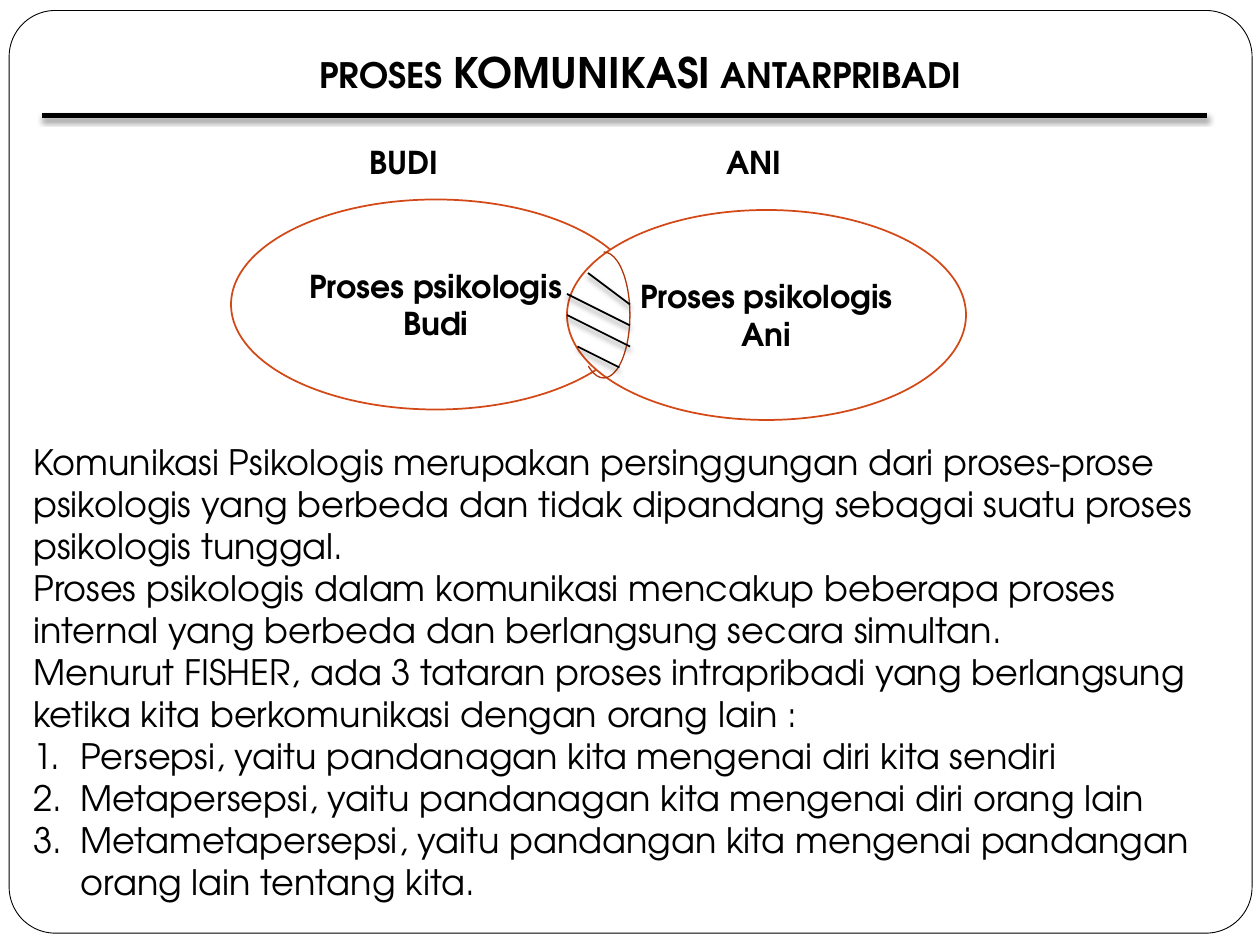
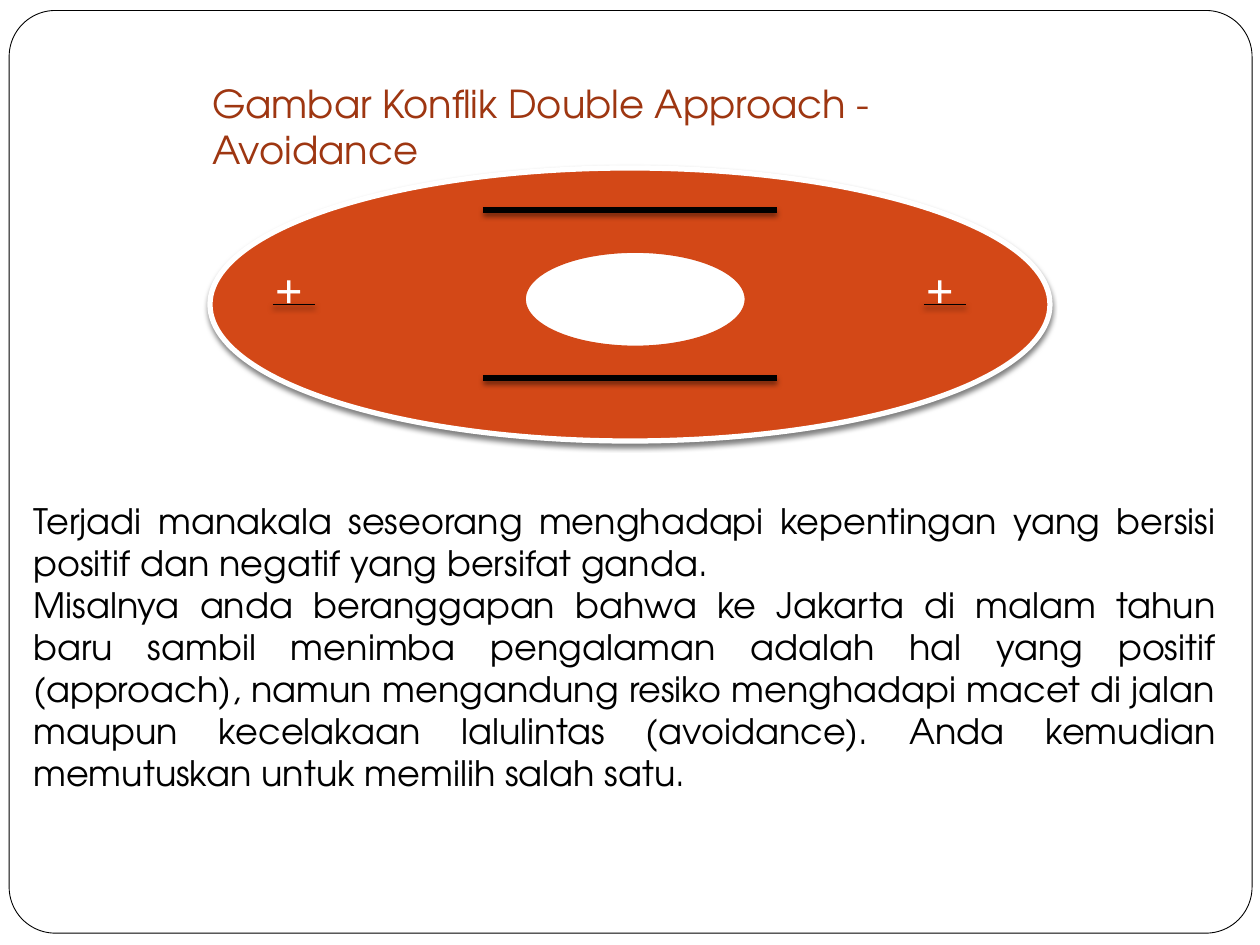
from dataclasses import dataclass

from lxml import etree
from pptx import Presentation
from pptx.dml.color import RGBColor
from pptx.enum.shapes import MSO_CONNECTOR, MSO_SHAPE
from pptx.enum.text import MSO_ANCHOR, MSO_AUTO_SIZE, PP_ALIGN
from pptx.oxml.ns import qn
from pptx.util import Pt

PX = 9525  # 96 px to the inch
STRAIGHT = MSO_CONNECTOR.STRAIGHT
OVAL, ARC, ROUNDED = MSO_SHAPE.OVAL, MSO_SHAPE.ARC, MSO_SHAPE.ROUNDED_RECTANGLE
TOP, MIDDLE, BOTTOM = MSO_ANCHOR.TOP, MSO_ANCHOR.MIDDLE, MSO_ANCHOR.BOTTOM
LEFT, CENTER, JUSTIFY = PP_ALIGN.LEFT, PP_ALIGN.CENTER, PP_ALIGN.JUSTIFY


@dataclass(frozen=True)
class Theme:
    black: str = "000000"
    white: str = "FFFFFF"
    orange: str = "D34817"
    brown: str = "B1360B"
    rust: str = "9E3611"
    font: str = "TeX Gyre Adventor"
    sign_font: str = "Times New Roman"
    label: int = 18
    body: int = 20
    heading: int = 22
    emphasis: int = 24
    sign: int = 28


theme = Theme()


def write(shape, paragraphs, *, size, color=theme.black, font=theme.font, bold=False,
          align=LEFT, anchor=TOP, wrap=True, numbered_from=None):
    """Fill a shape; a paragraph is a string or a list of (text, size) spans."""
    frame = shape.text_frame
    frame.auto_size = MSO_AUTO_SIZE.NONE
    frame.word_wrap, frame.vertical_anchor = wrap, anchor
    for index, content in enumerate(paragraphs):
        para = frame.add_paragraph() if index else frame.paragraphs[0]
        para.alignment = align
        if numbered_from is not None and index >= numbered_from:
            properties = para._p.get_or_add_pPr()
            properties.set("marL", str(36 * PX))
            properties.set("indent", str(-36 * PX))
            etree.SubElement(properties, qn("a:buFont"), typeface=font)
            etree.SubElement(properties, qn("a:buAutoNum"), type="arabicPeriod")
        spans = [(content, size)] if isinstance(content, str) else content
        for text, span_size in spans:
            span = para.add_run()
            span.text = text
            span.font.name, span.font.size, span.font.bold = font, Pt(span_size), bold
            span.font.color.rgb = RGBColor.from_string(color)


def paint(item, line, width, fill=None, shadow=False):
    """Set line, fill and shadow of a shape or connector."""
    if fill:
        item.fill.solid()
        item.fill.fore_color.rgb = RGBColor.from_string(fill)
    item.line.color.rgb = RGBColor.from_string(line)
    item.line.width = Pt(width)
    effects = etree.SubElement(item.element.spPr, qn("a:effectLst"))
    if shadow:
        outer = etree.SubElement(effects, qn("a:outerShdw"), blurRad=str(Pt(3)),
                                 dist=str(Pt(2)), dir="5400000", rotWithShape="0")
        color = etree.SubElement(outer, qn("a:srgbClr"), val=theme.black)
        etree.SubElement(color, qn("a:alpha"), val="50000")


deck = Presentation()
deck.slide_width, deck.slide_height = 960 * PX, 720 * PX
layout = deck.slide_layouts[5]
process, conflict = [deck.slides.add_slide(layout) for _ in range(2)]

# The rounded page frame lives on the shared layout, behind everything.
page_frame = process.shapes.add_shape(ROUNDED, 7 * PX, 8 * PX, 947 * PX, 703 * PX)
page_frame.adjustments[0] = 0.05
paint(page_frame, theme.black, 0.5, fill=theme.white)
page_frame.element.nvSpPr.cNvPr.set("id", "99")
layout.shapes.element.insert(2, page_frame.element)

# Titles
titles = [
    (process, (80, 0, 816, 84),
     [("PROSES ", theme.body), ("KOMUNIKASI", theme.emphasis), (" ANTARPRIBADI", theme.body)],
     dict(size=theme.body, bold=True, align=CENTER, anchor=BOTTOM)),
    (conflict, (152, 56, 676, 45), "Gambar Konflik Double Approach - Avoidance",
     dict(size=theme.heading, color=theme.rust)),
]
for page, place, text, style in titles:
    title = page.shapes.title
    title.left, title.top, title.width, title.height = [n * PX for n in place]
    write(title, [text], **style)
process.shapes.title.text_frame.margin_bottom = 10 * PX

# Overlapping psychological processes and the large conflict oval
ovals = [
    (process, (176, 152, 312, 160), theme.white, theme.orange, 1, "Proses psikologis Budi"),
    (process, (432, 160, 304, 160), theme.white, theme.orange, 1, "Proses psikologis Ani"),
    (conflict, (160, 128, 640, 208), theme.orange, theme.white, 3, None),
    (conflict, (400, 192, 168, 72), theme.white, theme.orange, 1, None),
]
for page, place, fill, line, width, text in ovals:
    oval = page.shapes.add_shape(OVAL, *[n * PX for n in place])
    paint(oval, line, width, fill=fill, shadow=line == theme.white)
    if text:
        write(oval, [text], size=theme.label, bold=True, align=CENTER, anchor=MIDDLE)

overlap_edge = process.shapes.add_shape(ARC, 440 * PX, 192 * PX, 40 * PX, 96 * PX)
overlap_edge.adjustments[0], overlap_edge.adjustments[1] = 162, 64.01
overlap_edge.fill.background()
paint(overlap_edge, theme.brown, 0.75)

# Title rule, overlap hatching, barriers and sign underlines
lines = [
    (process, 3, [(32, 88, 920, 88)]),
    (process, 1, [(448, 208, 480, 232), (432, 224, 480, 248),
                  (432, 240, 480, 264), (440, 264, 472, 280)]),
    (conflict, 3, [(368, y, 592, y) for y in (160, 288)]),
    (conflict, 1, [(x, 232, x + 32, 232) for x in (208, 704)]),
]
for page, width, ends in lines:
    for points in ends:
        connector = page.shapes.add_connector(STRAIGHT, *[n * PX for n in points])
        paint(connector, theme.black, width, shadow=True)

# Labels, signs and body text
label_style = dict(size=theme.label, bold=True, wrap=False)
sign_style = dict(size=theme.sign, color=theme.white, font=theme.sign_font, bold=True, wrap=False)
boxes = [
    (process, (272, 104, 80, 38), ["BUDI"], label_style),
    (process, (544, 104, 62, 38), ["ANI"], label_style),
    (process, (16, 331, 928, 365), [
        "Komunikasi Psikologis merupakan persinggungan dari proses-prose psikologis "
        "yang berbeda dan tidak dipandang sebagai suatu proses psikologis tunggal.",
        "Proses psikologis dalam komunikasi mencakup beberapa proses internal yang "
        "berbeda dan berlangsung secara simultan.",
        "Menurut FISHER, ada 3 tataran proses intrapribadi yang berlangsung ketika "
        "kita berkomunikasi dengan orang lain :",
        "Persepsi, yaitu pandanagan kita mengenai diri kita sendiri",
        "Metapersepsi, yaitu pandanagan kita mengenai diri orang lain",
        "Metametapersepsi, yaitu pandangan kita mengenai pandangan orang lain tentang kita.",
    ], dict(size=theme.body, numbered_from=3)),
    (conflict, (200, 193, 44, 55), ["+"], sign_style),
    (conflict, (696, 193, 44, 55), ["+"], sign_style),
    (conflict, (16, 376, 920, 236), [
        "Terjadi manakala seseorang menghadapi kepentingan yang bersisi positif dan "
        "negatif yang bersifat ganda.",
        "Misalnya anda beranggapan bahwa ke Jakarta di malam tahun baru sambil menimba "
        "pengalaman adalah hal yang positif (approach), namun mengandung resiko "
        "menghadapi macet di jalan maupun kecelakaan lalulintas (avoidance). Anda "
        "kemudian memutuskan untuk memilih salah satu.",
    ], dict(size=theme.body, align=JUSTIFY)),
]
for page, place, paragraphs, style in boxes:
    box = page.shapes.add_textbox(*[n * PX for n in place])
    write(box, paragraphs, **style)

deck.save("out.pptx")
